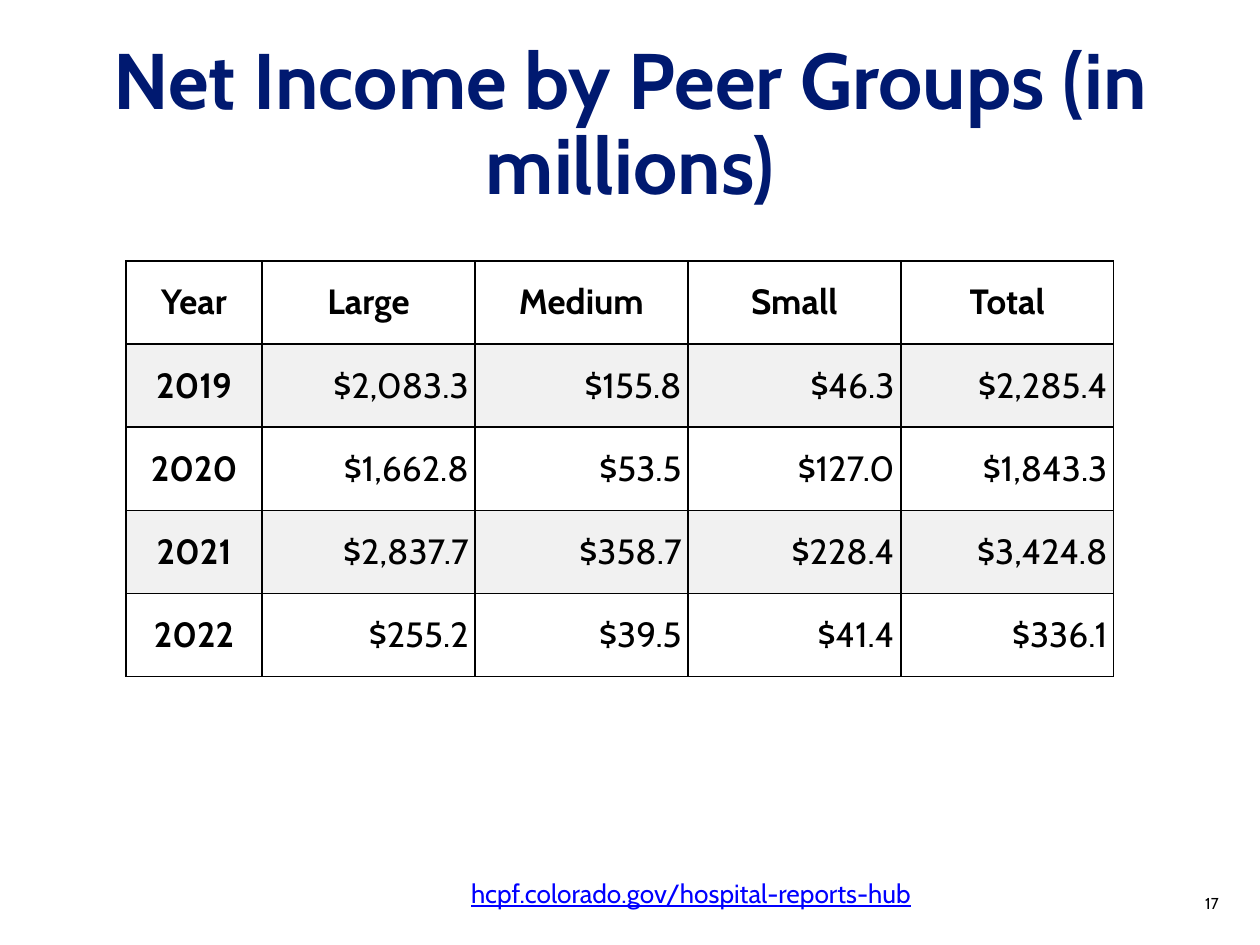
from lxml.etree import SubElement
from pptx import Presentation
from pptx.dml.color import RGBColor
from pptx.enum.text import MSO_ANCHOR, MSO_AUTO_SIZE, PP_ALIGN
from pptx.oxml.ns import qn
from pptx.util import Inches, Pt

TITLE = "Net Income by Peer Groups (in millions)"
ROWS = [
    ("Year", "Large", "Medium", "Small", "Total"),
    ("2019", "$2,083.3", "$155.8", "$46.3", "$2,285.4"),
    ("2020", "$1,662.8", "$53.5", "$127.0", "$1,843.3"),
    ("2021", "$2,837.7", "$358.7", "$228.4", "$3,424.8"),
    ("2022", "$255.2", "$39.5", "$41.4", "$336.1"),
]
LINK = "hcpf.colorado.gov/hospital-reports-hub"
PAGE = "17"

FONT = "Cabin"
NAVY = RGBColor(0x00, 0x19, 0x70)
BLACK = RGBColor(0x00, 0x00, 0x00)
WHITE = RGBColor(0xFF, 0xFF, 0xFF)
BAND = RGBColor(0xF1, 0xF1, 0xF1)
BLUE = RGBColor(0x00, 0x00, 0xFF)

YEAR_WIDTH, GROUP_WIDTH, ROW_HEIGHT = 1.08, 1.69, 0.66


def style(p, size, color, align=PP_ALIGN.LEFT, bold=False):
    p.alignment = align
    p.font.name = FONT
    p.font.size = Pt(size)
    p.font.bold = bold
    p.font.color.rgb = color


def place(sp, left, top, width, height):
    sp.left, sp.top = Inches(left), Inches(top)
    sp.width, sp.height = Inches(width), Inches(height)


def add_text(slide, text, box, anchor):
    """Add a wrapping text box and return its frame."""
    tf = slide.shapes.add_textbox(*map(Inches, box)).text_frame
    tf.word_wrap = True
    tf.vertical_anchor = anchor
    tf.text = text
    return tf


def add_borders(cell):
    tcPr = cell._tc.get_or_add_tcPr()
    for i, side in enumerate(("lnL", "lnR", "lnT", "lnB")):
        ln = tcPr.makeelement(qn(f"a:{side}"), {"w": str(Pt(1))})
        tcPr.insert(i, ln)
        fill = SubElement(ln, qn("a:solidFill"))
        SubElement(fill, qn("a:srgbClr"), val=str(BLACK))


def add_income_table(slide):
    widths = [YEAR_WIDTH] + [GROUP_WIDTH] * (len(ROWS[0]) - 1)
    table = slide.shapes.add_table(
        len(ROWS), len(widths), Inches(1), Inches(2.07),
        Inches(sum(widths)), Inches(ROW_HEIGHT * len(ROWS))).table
    for column, width in zip(table.columns, widths):
        column.width = Inches(width)
    for r, values in enumerate(ROWS):
        table.rows[r].height = Inches(ROW_HEIGHT)
        for c, value in enumerate(values):
            cell = table.cell(r, c)
            cell.text = value
            cell.vertical_anchor = MSO_ANCHOR.MIDDLE
            cell.margin_left = cell.margin_right = Inches(0.05)
            cell.margin_top = cell.margin_bottom = Inches(0.05)
            cell.fill.solid()
            cell.fill.fore_color.rgb = BAND if r % 2 else WHITE
            add_borders(cell)
            heading = r == 0 or c == 0
            align = PP_ALIGN.CENTER if heading else PP_ALIGN.RIGHT
            style(cell.text_frame.paragraphs[0], 20, BLACK, align, heading)


def main():
    prs = Presentation()
    prs.slide_width, prs.slide_height = Inches(10), Inches(7.5)
    slide = prs.slides.add_slide(prs.slide_layouts[5])

    title = slide.shapes.title
    place(title, 0.69, 0.48, 8.62, 1.05)
    tf = title.text_frame
    tf.text = TITLE
    tf.auto_size = MSO_AUTO_SIZE.NONE
    tf.vertical_anchor = MSO_ANCHOR.MIDDLE
    p = tf.paragraphs[0]
    p.line_spacing = 0.9
    style(p, 45, NAVY, PP_ALIGN.CENTER, bold=True)

    add_income_table(slide)

    tf = add_text(slide, PAGE, (7.52, 6.97, 2.25, 0.4), MSO_ANCHOR.MIDDLE)
    style(tf.paragraphs[0], 9, BLACK, PP_ALIGN.RIGHT)

    tf = add_text(slide, LINK, (3.64, 6.89, 5.61, 0.4), MSO_ANCHOR.TOP)
    tf.margin_top = tf.margin_bottom = Inches(0.1)
    p = tf.paragraphs[0]
    p.line_spacing = 0.9
    style(p, 15, BLUE)
    p.font.underline = True

    prs.save("out.pptx")


if __name__ == "__main__":
    main()
